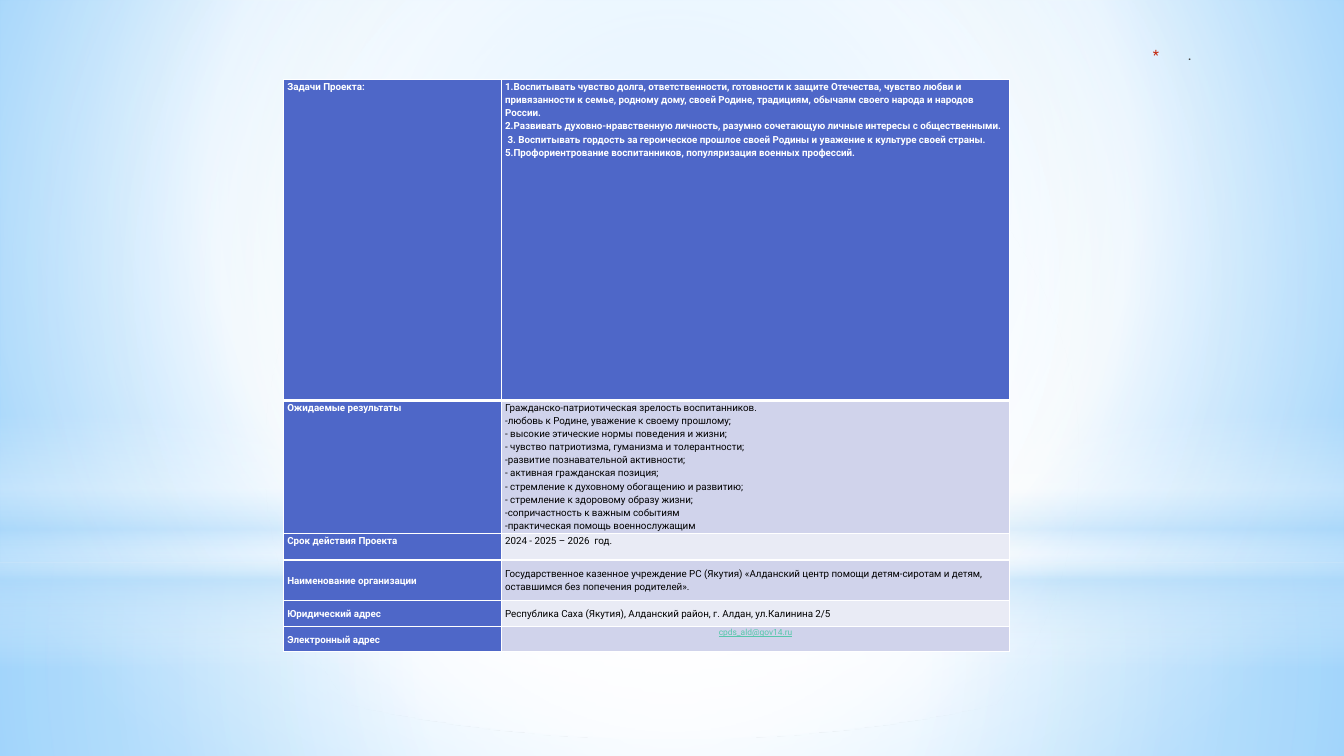
from dataclasses import dataclass

from lxml.etree import SubElement
from pptx import Presentation
from pptx.dml.color import RGBColor
from pptx.enum.shapes import MSO_SHAPE as Preset
from pptx.enum.text import MSO_ANCHOR as Anchor, PP_ALIGN as Align
from pptx.oxml.ns import qn
from pptx.util import Cm, Pt


@dataclass(frozen=True)
class Theme:
    font: str = "Roboto"
    body_size: float = 7
    email_size: float = 6
    title_size: float = 8
    white: str = "FFFFFF"
    black: str = "000000"
    label: str = "4E67C8"
    band_dark: str = "D0D3EB"
    band_light: str = "E9EBF5"
    email: str = "56C7AA"
    bullet: str = "C3260C"
    haze: str = "B4DCFA"
    sky_inner: str = "9ED5FF"
    sky_outer: str = "5BB9FF"
    title_mid: str = "404040"
    title_end: str = "212745"


THEME = Theme()
CENTRE = (50, 50, 50, 50)

GOALS = [
    "1.Воспитывать чувство долга, ответственности, готовности к защите Отечества, чувство любви и привязанности к семье, родному дому, своей Родине, традициям, обычаям своего народа и народов России.",
    "2.Развивать духовно-нравственную личность, разумно сочетающую личные интересы с общественными.",
    " 3. Воспитывать гордость за героическое прошлое своей Родины и уважение к культуре своей страны.",
    "5.Профориентрование воспитанников, популяризация военных профессий.",
]
RESULTS = [
    "Гражданско-патриотическая зрелость воспитанников.",
    "-любовь к Родине, уважение к своему прошлому;",
    "- высокие этические нормы поведения и жизни;",
    "- чувство патриотизма, гуманизма и толерантности;",
    "-развитие познавательной активности;",
    "- активная гражданская позиция;",
    "- стремление к духовному обогащению и развитию;",
    "- стремление к здоровому образу жизни;",
    "-сопричастность к важным событиям",
    "-практическая помощь военнослужащим",
]
ORGANISATION = "Государственное казенное учреждение РС (Якутия) «Алданский центр помощи детям-сиротам и детям, оставшимся без попечения родителей»."
ADDRESS = "Республика Саха (Якутия), Алданский район, г. Алдан, ул.Калинина 2/5"

BODY = dict(color=THEME.black)
GOAL = dict(color=THEME.white, bold=True)
EMAIL = dict(color=THEME.email, size=THEME.email_size, underline=True, align=Align.CENTER)
ROWS = [
    ("Задачи Проекта:", GOALS, 8.08, THEME.label, Anchor.TOP, Anchor.TOP, GOAL),
    ("Ожидаемые результаты", RESULTS, 3.35, THEME.band_dark, Anchor.TOP, Anchor.TOP, BODY),
    ("Срок действия Проекта", ["2024 - 2025 – 2026  год."], 0.67, THEME.band_light, Anchor.TOP, Anchor.TOP, BODY),
    ("Наименование организации", [ORGANISATION], 1.02, THEME.band_dark, Anchor.MIDDLE, Anchor.MIDDLE, BODY),
    ("Юридический адрес", [ADDRESS], 0.66, THEME.band_light, Anchor.MIDDLE, Anchor.MIDDLE, BODY),
    ("Электронный адрес", ["cpds_ald@gov14.ru"], 0.62, THEME.band_dark, Anchor.MIDDLE, Anchor.TOP, EMAIL),
]


def write_text(paragraph, text, *, color, size=THEME.body_size, bold=False,
               underline=False, align=Align.LEFT, spacing=1.15):
    paragraph.alignment = align
    paragraph.line_spacing = spacing
    run = paragraph.add_run()
    run.text = text
    font = run.font
    font.name, font.size, font.bold, font.underline = THEME.font, Pt(size), bold, underline
    font.color.rgb = RGBColor.from_string(color)
    return run


def apply_gradient(parent, stops, focus=None):
    gradient = parent.makeelement(qn("a:gradFill"), {"rotWithShape": "1"})
    stop_list = SubElement(gradient, qn("a:gsLst"))
    for position, color, opacity in stops:
        stop = SubElement(stop_list, qn("a:gs"), pos=str(position * 1000))
        shade = SubElement(stop, qn("a:srgbClr"), val=color)
        if opacity < 100:
            SubElement(shade, qn("a:alpha"), val=str(opacity * 1000))
    if focus:
        route = SubElement(gradient, qn("a:path"), {"path": "circle"})
        sides = {side: str(value * 1000) for side, value in zip("ltrb", focus)}
        SubElement(route, qn("a:fillToRect"), sides)
    else:
        SubElement(gradient, qn("a:lin"), ang="5400000", scaled="0")
    parent.replace(parent.find(qn("a:solidFill")), gradient)


def paint_background(slide):
    slide.background.fill.solid()
    properties = next(slide.element.iter(qn("p:bgPr")))
    stops = [(0, THEME.sky_inner, 100), (60, THEME.white, 100), (100, THEME.sky_outer, 100)]
    apply_gradient(properties, stops, (20, 10, 20, 60))


def add_glow(slide, preset, top, height, stops, focus=CENTRE):
    shape = slide.shapes.add_shape(preset, 0, Cm(top), Cm(33.87), Cm(height))
    shape.shadow.inherit = False
    shape.line.fill.background()
    shape.fill.solid()
    apply_gradient(shape.element.spPr, stops, focus)


def add_sky(slide):
    white, haze = THEME.white, THEME.haze
    add_glow(slide, Preset.RECTANGLE, 14.17, 4.88, [(0, white, 91), (37, white, 76), (100, haze, 79)])
    add_glow(slide, Preset.RECTANGLE, 0, 14.17, [(0, white, 89), (48, white, 62), (100, haze, 79)])
    horizon = [(0, white, 0), (29, white, 30), (45, haze, 40),
               (55, white, 26), (65, haze, 60), (100, white, 0)]
    add_glow(slide, Preset.RECTANGLE, 10.46, 6.35, horizon, None)
    add_glow(slide, Preset.OVAL, 4.45, 14.17, [(0, white, 100), (56, white, 0)])


def format_title(slide):
    title = slide.shapes.title
    slide.shapes.element.append(title.element)
    title.left, title.top, title.width, title.height = Cm(2.34), Cm(1.02), Cm(27.94), Cm(0.76)
    title.text_frame.vertical_anchor = Anchor.MIDDLE
    paragraph = title.text_frame.paragraphs[0]
    run = write_text(paragraph, ".", color=THEME.black, size=THEME.title_size,
                     bold=True, align=Align.RIGHT, spacing=1.0)
    stops = [(0, THEME.black, 100), (40, THEME.title_mid, 100), (100, THEME.title_end, 65)]
    apply_gradient(run.font.color and run.font.fill and run.text and next(paragraph.runs[0]._r.iter(qn("a:rPr"))), stops)
    properties = paragraph._p.get_or_add_pPr()
    properties.set("marL", str(Cm(0.89)))
    properties.set("indent", str(Cm(-0.89)))
    bullet_color = SubElement(properties, qn("a:buClr"))
    SubElement(bullet_color, qn("a:srgbClr"), val=THEME.bullet)
    SubElement(properties, qn("a:buSzPct"), val="128000")
    SubElement(properties, qn("a:buFont"), typeface=THEME.font)
    SubElement(properties, qn("a:buChar"), char="*")


def set_borders(cell, top, bottom):
    properties = cell._tc.get_or_add_tcPr()
    for side, width in (("L", 1), ("R", 1), ("T", top), ("B", bottom)):
        line = SubElement(properties, qn(f"a:ln{side}"), w=str(Pt(width)))
        fill = SubElement(line, qn("a:solidFill"))
        SubElement(fill, qn("a:srgbClr"), val=THEME.white)


def fill_cell(cell, lines, fill, anchor, row, **text_format):
    set_borders(cell, 3 if row == 1 else 1, 3 if row == 0 else 1)
    cell.fill.solid()
    cell.fill.fore_color.rgb = RGBColor.from_string(fill)
    cell.margin_left = cell.margin_right = Cm(0.1)
    cell.margin_top = cell.margin_bottom = 0
    cell.vertical_anchor = anchor
    frame = cell.text_frame
    for index, text in enumerate(lines):
        paragraph = frame.add_paragraph() if index else frame.paragraphs[0]
        write_text(paragraph, text, **text_format)


def add_project_table(slide):
    height = sum(row[2] for row in ROWS)
    table = slide.shapes.add_table(len(ROWS), 2, Cm(7.14), Cm(2.01), Cm(18.31), Cm(height)).table
    table.first_row = table.horz_banding = False
    table.columns[0].width, table.columns[1].width = Cm(5.49), Cm(12.82)
    for index, (label, lines, height, fill, label_anchor, anchor, text_format) in enumerate(ROWS):
        table.rows[index].height = Cm(height)
        fill_cell(table.cell(index, 0), [label], THEME.label, label_anchor, index,
                  color=THEME.white, bold=True)
        fill_cell(table.cell(index, 1), lines, fill, anchor, index, **text_format)


def main():
    presentation = Presentation()
    presentation.slide_width, presentation.slide_height = Cm(33.87), Cm(19.05)
    slide = presentation.slides.add_slide(presentation.slide_layouts[5])
    paint_background(slide)
    add_sky(slide)
    format_title(slide)
    add_project_table(slide)
    presentation.save("out.pptx")


if __name__ == "__main__":
    main()
